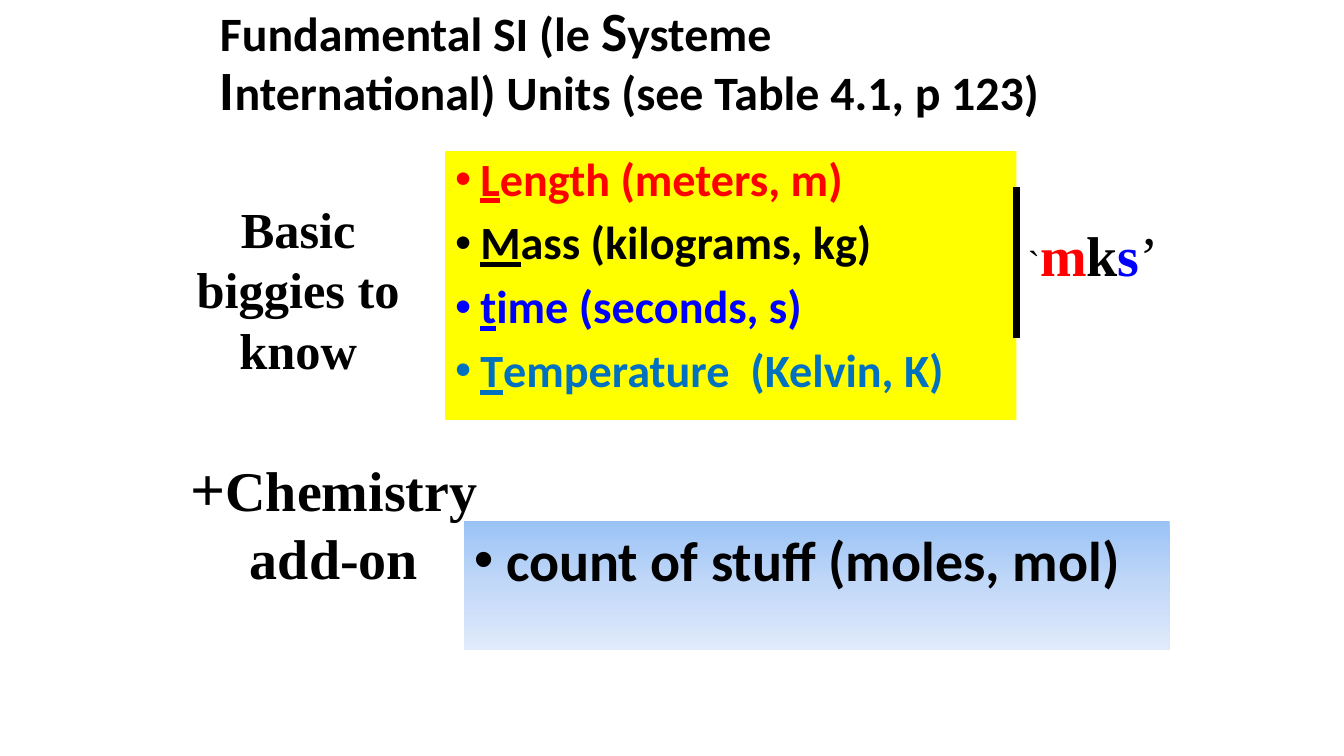
from lxml import etree
from pptx import Presentation, util as u
from pptx.dml.color import RGBColor
from pptx.enum import shapes, text
from pptx.oxml.ns import qn

PX = 9525  # EMU per px, 96 px to the inch
SANS, SERIF = "Calibri", "Times New Roman"
COLORS = {
    "black": "000000", "red": "FF0000", "blue": "0000FF",
    "teal": "0070C0", "yellow": "FFFF00",
    "sky_top": "9AC3F5", "sky_middle": "C2D8F8", "sky_bottom": "E1EBFB",
}


def px(*lengths):
    return [u.Emu(length * PX) for length in lengths]


def rgb(name):
    return RGBColor.from_string(COLORS[name])


def add_run(paragraph, words, size, font, color="black", bold=True, underline=False):
    run = paragraph.add_run()
    run.text = words
    run.font.size = u.Pt(size)
    run.font.name = font
    run.font.color.rgb = rgb(color)
    run.font.bold = bold
    run.font.underline = underline


def set_half_line_before(paragraph):
    spacing = etree.SubElement(paragraph._p.get_or_add_pPr(), qn("a:spcBef"))
    etree.SubElement(spacing, qn("a:spcPct"), val="50000")


def add_bullet(paragraph, indent=0):
    properties = paragraph._p.get_or_add_pPr()
    properties.set("marL", str(indent * PX))
    properties.set("indent", str(-indent * PX))
    etree.SubElement(properties, qn("a:buFont"), typeface="Arial")
    etree.SubElement(properties, qn("a:buChar"), char="•")


def add_text_box(slide, box):
    shape = slide.shapes.add_textbox(*px(*box))
    shape.text_frame.word_wrap = True
    return shape.text_frame


def add_label(slide, box, runs):
    paragraph = add_text_box(slide, box).paragraphs[0]
    paragraph.alignment = text.PP_ALIGN.CENTER
    set_half_line_before(paragraph)
    for run in runs:
        add_run(paragraph, *run)


def add_panel(slide, box):
    shape = slide.shapes.add_shape(shapes.MSO_SHAPE.RECTANGLE, *px(*box))
    shape.shadow.inherit = False
    shape.line.fill.background()
    shape.text_frame.word_wrap = True
    shape.text_frame.vertical_anchor = text.MSO_ANCHOR.TOP
    shape.text_frame.paragraphs[0].alignment = text.PP_ALIGN.LEFT
    return shape


def fill_gradient(shape, names):
    shape.fill.gradient()
    shape.fill.gradient_angle = 270
    stops = shape._element.spPr.find(qn("a:gradFill")).find(qn("a:gsLst"))
    for stop in list(stops):
        stops.remove(stop)
    for index, name in enumerate(names):
        position = str(100000 * index // (len(names) - 1))
        stop = etree.SubElement(stops, qn("a:gs"), pos=position)
        etree.SubElement(stop, qn("a:srgbClr"), val=COLORS[name])


def add_title(slide):
    frame = add_text_box(slide, (200, 0, 816, 120))
    frame.vertical_anchor = text.MSO_ANCHOR.MIDDLE
    paragraph = frame.paragraphs[0]
    paragraph.line_spacing = 0.9
    for words, size in [
        ("Fundamental SI (le ", 34.2), ("S", 39.6), ("ysteme ", 34.2),
        ("I", 39.6), ("nternational) Units (see Table 4.1, p 123)", 34.2),
    ]:
        add_run(paragraph, words, size, SANS)


def add_unit_list(slide):
    panel = add_panel(slide, (424, 144, 544, 256))
    panel.fill.solid()
    panel.fill.fore_color.rgb = rgb("yellow")
    units = [
        ("Length (meters, m)", "red"), ("Mass (kilograms, kg)", "black"),
        ("time (seconds, s)", "blue"), ("Temperature  (Kelvin, K)", "teal"),
    ]
    frame = panel.text_frame
    for index, (words, color) in enumerate(units):
        paragraph = frame.add_paragraph() if index else frame.paragraphs[0]
        paragraph.alignment = text.PP_ALIGN.LEFT
        paragraph.line_spacing = 0.9
        paragraph.space_before = u.Pt(10)
        add_bullet(paragraph, 24)
        add_run(paragraph, words[0], 33, SANS, color, underline=True)
        add_run(paragraph, words[1:], 33, SANS, color)


def add_mole_panel(slide):
    panel = add_panel(slide, (442, 496, 672, 123))
    fill_gradient(panel, ["sky_top", "sky_middle", "sky_bottom"])
    paragraph = panel.text_frame.paragraphs[0]
    set_half_line_before(paragraph)
    add_bullet(paragraph)
    add_run(paragraph, " ", 40, SANS, bold=False)
    add_run(paragraph, "count of stuff (moles, mol)", 40, SANS)


def add_bar(slide, x, top, bottom):
    line = slide.shapes.add_connector(
        shapes.MSO_CONNECTOR.STRAIGHT, *px(x, top, x, bottom))
    line.line.color.rgb = rgb("black")
    line.line.width = u.Pt(4.5)
    etree.SubElement(line._element.spPr, qn("a:effectLst"))


def main():
    presentation = Presentation()
    presentation.slide_width, presentation.slide_height = px(1280, 720)
    slide = presentation.slides.add_slide(presentation.slide_layouts[6])

    # Title and the basic units
    add_title(slide)
    add_unit_list(slide)
    add_label(slide, (160, 184, 248, 184), [("Basic biggies to know", 36, SERIF)])

    # Amount of substance
    add_mole_panel(slide)

    # Bar joining the first three units under their short name
    add_bar(slide, 968, 178, 322)
    add_label(slide, (968, 205, 146, 74), [
        ("`", 26, SERIF, "black", False), ("m", 40, SERIF, "red"),
        ("k", 40, SERIF), ("s", 40, SERIF, "blue"),
        ("’", 40, SERIF, "black", False),
    ])

    # Chemistry label
    add_label(slide, (164, 424, 308, 145),
              [("+", 44, SERIF), ("Chemistry add-on", 40, SERIF)])

    presentation.save("out.pptx")


if __name__ == "__main__":
    main()
